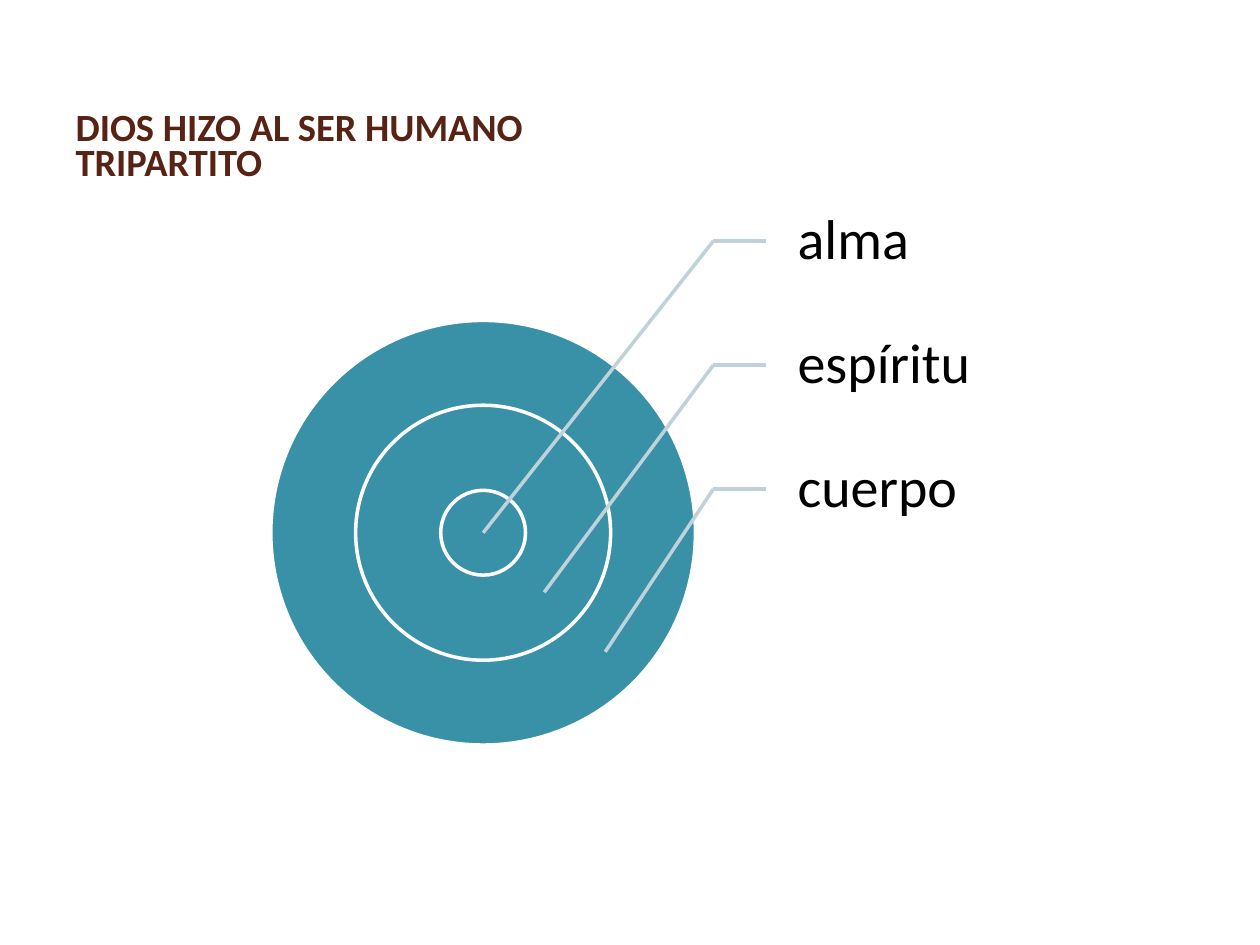
from pptx import Presentation
from pptx.dml.color import RGBColor
from pptx.enum.shapes import MSO_CONNECTOR, MSO_SHAPE
from pptx.enum.text import MSO_ANCHOR, MSO_AUTO_SIZE, PP_ALIGN
from pptx.oxml import parse_xml
from pptx.util import Cm, Pt

OVAL = MSO_SHAPE.OVAL
STRAIGHT = MSO_CONNECTOR.STRAIGHT
MIDDLE, BOTTOM = MSO_ANCHOR.MIDDLE, MSO_ANCHOR.BOTTOM
NO_FIT = MSO_AUTO_SIZE.NONE
LEFT = PP_ALIGN.LEFT

FONT = "Calibri"
COLORS = {"title": "572314", "disc": "3891A7", "rim": "FFFFFF",
          "lead": "BFD2D9", "label": "000000"}
NO_SHADOW = ('<a:effectLst xmlns:a='
             '"http://schemas.openxmlformats.org/drawingml/2006/main"/>')

# Shared geometry in cm
MID_X, MID_Y = 9.74, 10.74
RINGS = (8.56, 5.14, 1.71)
LABELS = ("alma", "espíritu", "cuerpo")
TOP, ROW = 3.61, 2.5
BEND_X, LABEL_X, LABEL_W = 14.38, 15.44, 4.3
TIP_DX, TIP_DY = 1.23, 1.2


def color(name):
    return RGBColor.from_string(COLORS[name])


def style(par, size, name, bold=False):
    par.alignment = LEFT
    font = par.font
    font.name, font.size, font.bold = FONT, Pt(size), bold
    font.color.rgb = color(name)


def add_title(slide, text):
    title = slide.shapes.title
    title.left, title.top = Cm(1.27), Cm(0.61)
    title.width, title.height = Cm(10.6), Cm(3.23)
    frame = title.text_frame
    frame.text = text
    frame.word_wrap = True
    frame.auto_size = NO_FIT
    frame.vertical_anchor = BOTTOM
    par = frame.paragraphs[0]
    par.line_spacing = Pt(20)
    style(par, 22, "title", True)


def add_ring(slide, size):
    ring = slide.shapes.add_shape(OVAL, Cm(MID_X - size / 2),
                                  Cm(MID_Y - size / 2), Cm(size), Cm(size))
    ring.shadow.inherit = False
    ring.fill.solid()
    ring.fill.fore_color.rgb = color("disc")
    ring.line.color.rgb = color("rim")
    ring.line.width = Pt(2)


def add_label(slide, text, top):
    box = slide.shapes.add_textbox(Cm(LABEL_X), Cm(top), Cm(LABEL_W), Cm(ROW))
    frame = box.text_frame
    frame.text = text
    frame.word_wrap = True
    frame.vertical_anchor = MIDDLE
    frame.margin_left = Cm(0.64)
    frame.margin_top = frame.margin_right = frame.margin_bottom = Cm(0.1)
    par = frame.paragraphs[0]
    par.line_spacing = 0.9
    style(par, 32, "label")


def add_line(slide, x1, y1, x2, y2):
    line = slide.shapes.add_connector(STRAIGHT, Cm(x1), Cm(y1), Cm(x2), Cm(y2))
    line.line.color.rgb = color("lead")
    line.line.width = Pt(2)
    line._element.spPr.append(parse_xml(NO_SHADOW))


def main():
    deck = Presentation()
    deck.slide_width, deck.slide_height = Cm(25.4), Cm(19.05)
    slide = deck.slides.add_slide(deck.slide_layouts[5])
    add_title(slide, "DIOS HIZO AL SER HUMANO TRIPARTITO")

    # Concentric discs, largest at the back
    for size in RINGS:
        add_ring(slide, size)

    # Labels, each with a bent leader into its ring
    for i, text in enumerate(LABELS):
        top = TOP + i * ROW
        y = top + ROW / 2
        add_label(slide, text, top)
        add_line(slide, BEND_X, y, LABEL_X, y)
        add_line(slide, BEND_X, y, MID_X + i * TIP_DX, MID_Y + i * TIP_DY)

    deck.save("out.pptx")


if __name__ == "__main__":
    main()
